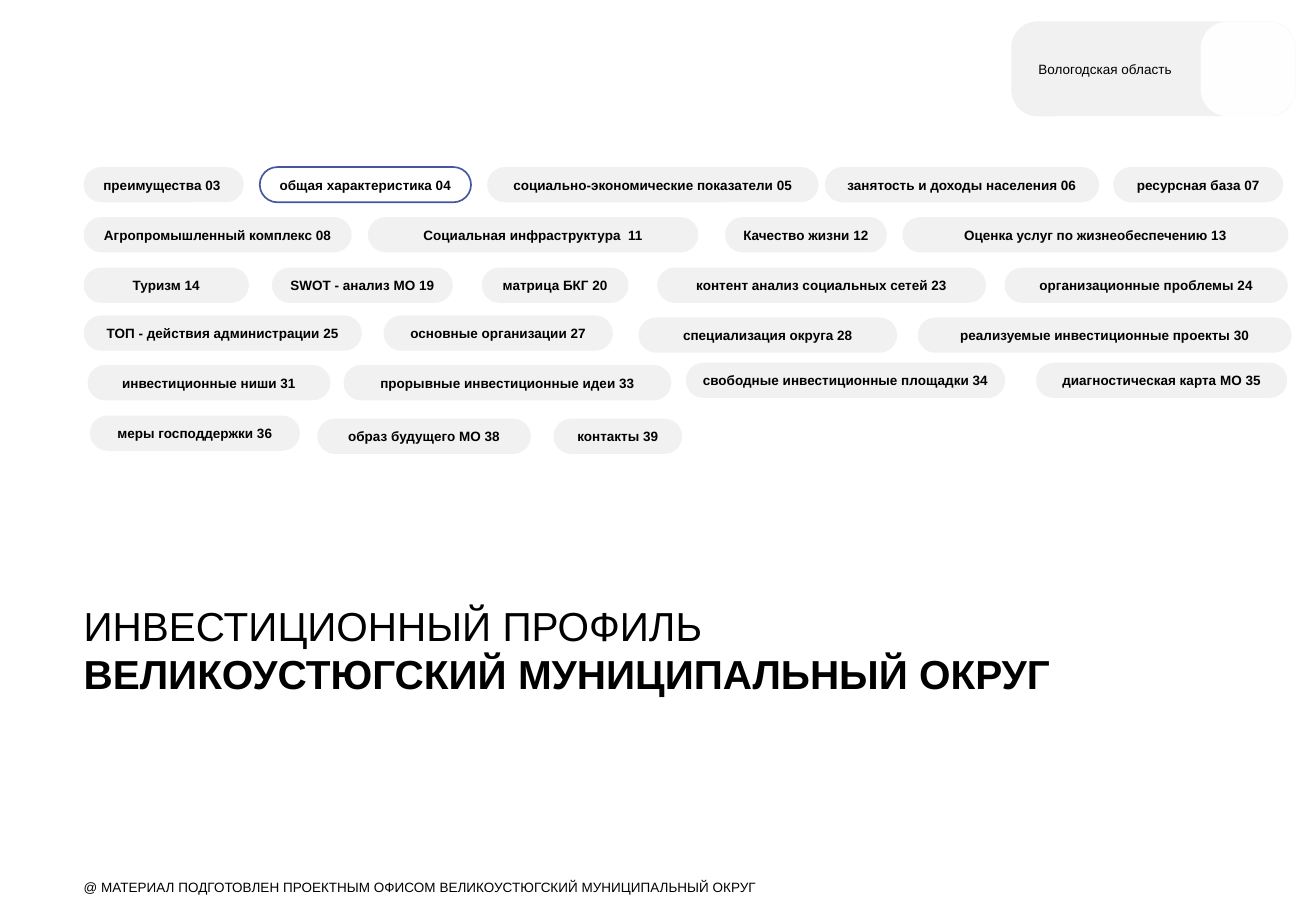
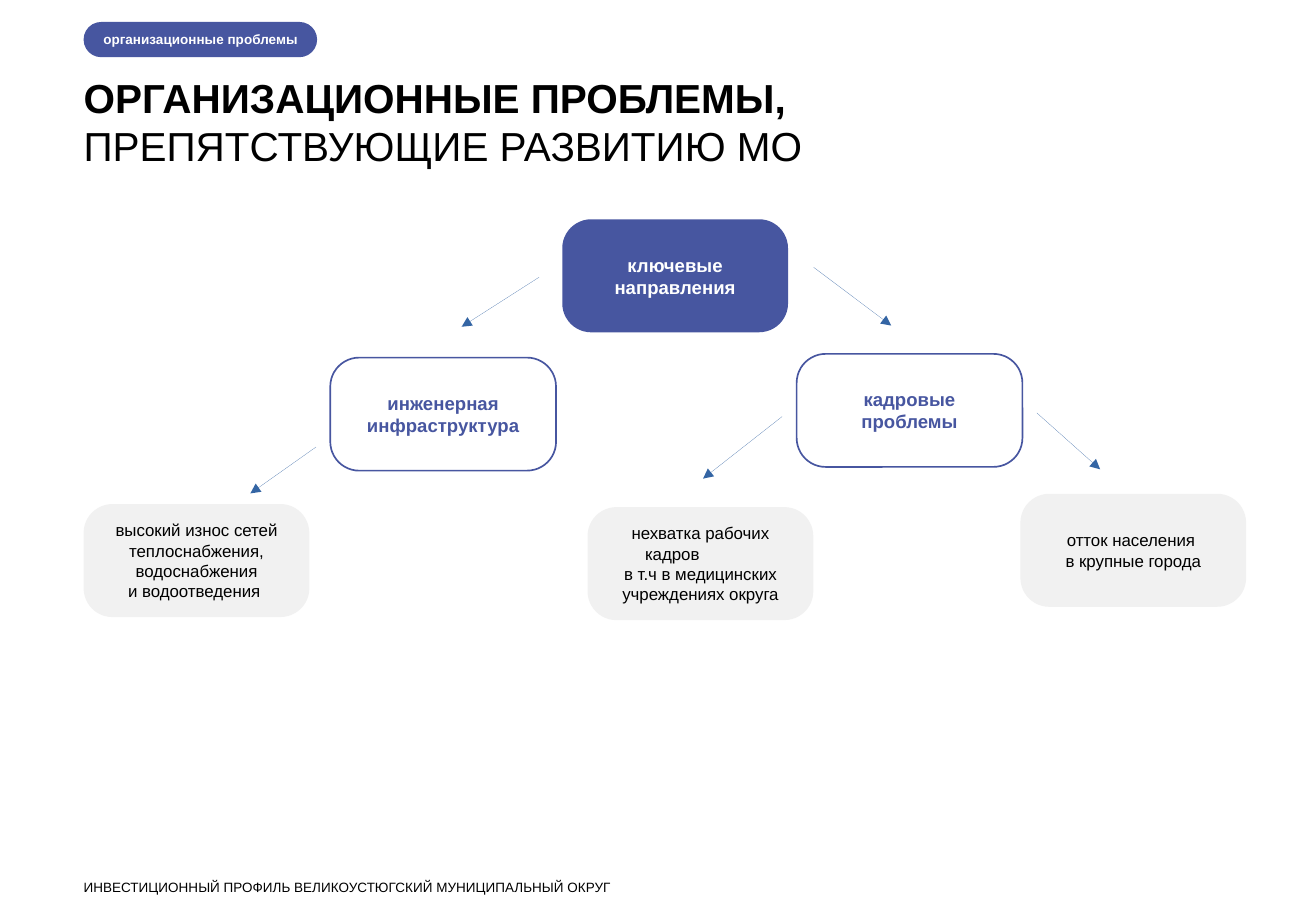
from lxml import etree
from pptx import Presentation
from pptx.dml.color import RGBColor
from pptx.enum import shapes, text
from pptx.oxml.ns import qn
from pptx.util import Pt

BLUE, GREY, WHITE, BLACK = "4756A0", "F1F1F1", "FFFFFF", "000000"
ARROW, TILE = "3465A4", "FEFEFE"
FONT = "Arial"
MARGIN = 49.6
PILL_HEIGHT = 20.9
CARD_WIDTH, CARD_HEIGHT = 133.9, 67
HAIRLINE = 0.01
CENTER, LEFT = text.PP_ALIGN.CENTER, text.PP_ALIGN.LEFT

FILLED = {"fill": BLUE, "color": WHITE}
OUTLINED = {"line": BLUE}
PLAIN = {"fill": GREY}

# Each row: top, then (label, left, width)
MENU_ROWS = [
    (99, [("социально-экономические показатели 05", 289, 196.5),
          ("занятость и доходы населения 06", 489.2, 162.7),
          ("ресурсная база 07", 660.3, 100.8)]),
    (128.7, [("Агропромышленный комплекс 08", MARGIN, 159),
             ("Социальная инфраструктура  11", 218.2, 196),
             ("Качество жизни 12", 430, 96),
             ("Оценка услуг по жизнеобеспечению 13", 535.2, 229)]),
    (158.6, [("Туризм 14", MARGIN, 98),
             ("SWOT - анализ МО 19", 161.3, 107.3),
             ("матрица БКГ 20", 285.8, 87),
             ("контент анализ социальных сетей 23", 389.8, 195),
             ("организационные проблемы 24", 595.8, 168)]),
    (187, [("ТОП - действия администрации 25", MARGIN, 165),
           ("основные организации 27", 227.5, 136)]),
    (188.2, [("специализация округа 28", 378.7, 153.4),
             ("реализуемые инвестиционные проекты 30", 544.3, 221.8)]),
    (216.4, [("инвестиционные ниши 31", 52, 144),
             ("прорывные инвестиционные идеи 33", 203.8, 194.4)]),
    (215, [("свободные инвестиционные площадки 34", 406.8, 189.4),
           ("диагностическая карта МО 35", 614.5, 149)]),
    (246.3, [("меры господдержки 36", 53.3, 124.6)]),
    (248.2, [("образ будущего МО 38", 188.2, 126.7),
             ("контакты 39", 328.3, 76.3)]),
]

# Paragraphs, each a list of (words, bold)
COVER_TITLE = [[("ИНВЕСТИЦИОННЫЙ ПРОФИЛЬ ", False),
                ("ВЕЛИКОУСТЮГСКИЙ МУНИЦИПАЛЬНЫЙ ОКРУГ", True)]]
PROBLEMS_TITLE = [[("ОРГАНИЗАЦИОННЫЕ ПРОБЛЕМЫ,", True)],
                  [("ПРЕПЯТСТВУЮЩИЕ РАЗВИТИЮ МО", False)]]
COVER_FOOTER = ("@ МАТЕРИАЛ ПОДГОТОВЛЕН ПРОЕКТНЫМ ОФИСОМ "
                "ВЕЛИКОУСТЮГСКИЙ МУНИЦИПАЛЬНЫЙ ОКРУГ")
PROBLEMS_FOOTER = "ИНВЕСТИЦИОННЫЙ ПРОФИЛЬ ВЕЛИКОУСТЮГСКИЙ МУНИЦИПАЛЬНЫЙ ОКРУГ"

# left, top, paragraphs, look
HEAD_CARDS = [
    (333.5, 130, ["ключевые направления"], FILLED),
    (195.9, 212, ["инженерная инфраструктура"], {**OUTLINED, "color": BLUE}),
    (472.5, 209.8, ["кадровые проблемы"], {**OUTLINED, "color": BLUE}),
]
DETAIL_CARDS = [
    (MARGIN, 298.8, ["высокий износ сетей теплоснабжения, водоснабжения",
                     "и водоотведения "]),
    (348.5, 300.6, ["нехватка рабочих кадров",
                    "в т.ч в медицинских учреждениях округа"]),
    (605.2, 292.7, ["отток населения ", "в крупные города"]),
]
# start x, start y, end x, end y
ARROWS = [
    (187.4, 265, 148.5, 292.5),
    (319.8, 164.3, 273.8, 193.7),
    (482.5, 158.4, 528.6, 193),
    (615, 244.8, 652.5, 278.2),
    (463.8, 247, 417, 283.7),
]


def rgb(value):
    return RGBColor.from_string(value)


def assign(target, values):
    for name, value in values.items():
        setattr(target, name, value)


def write(shape, paragraphs, size, color=BLACK, align=LEFT,
          insets=(0, 0, 0, 0), anchor=text.MSO_ANCHOR.MIDDLE):
    """Fill a shape with paragraphs, each a list of (words, bold) runs."""
    frame = shape.text_frame
    sides = ("margin_left", "margin_top", "margin_right", "margin_bottom")
    assign(frame, {"word_wrap": True, "vertical_anchor": anchor,
                   **dict(zip(sides, map(Pt, insets)))})
    for index, runs in enumerate(paragraphs):
        para = frame.paragraphs[0] if index == 0 else frame.add_paragraph()
        para.alignment = align
        for words, bold in runs:
            span = para.add_run()
            span.text = words
            assign(span.font, {"name": FONT, "size": Pt(size), "bold": bold})
            span.font.color.rgb = rgb(color)


def add_text(page, top, width, height, paragraphs, size):
    box = page.shapes.add_textbox(*map(Pt, (MARGIN, top, width, height)))
    write(box, paragraphs, size, anchor=text.MSO_ANCHOR.TOP)


def add_title(page, top, width, paragraphs):
    add_text(page, top, width, 57, paragraphs, 24)


def add_footer(page, words):
    add_text(page, 521, 577, 9, [[(words, False)]], 8)


def add_rounded(page, left, top, width, height, corner, fill=None, line=None):
    shape = page.shapes.add_shape(shapes.MSO_SHAPE.ROUNDED_RECTANGLE,
                                  *map(Pt, (left, top, width, height)))
    shape.adjustments[0] = corner
    shape.shadow.inherit = False
    if fill:
        shape.fill.solid()
        shape.fill.fore_color.rgb = rgb(fill)
    else:
        shape.fill.background()
    if line:
        shape.line.color.rgb = rgb(line)
        shape.line.width = Pt(1)
    else:
        shape.line.fill.background()
    return shape


def add_pill(page, label, left, top, width, align=CENTER, color=BLACK, **look):
    pill = add_rounded(page, left, top, width, PILL_HEIGHT, 0.5, **look)
    indent = 8.64 if align == LEFT else 0
    write(pill, [[(label, True)]], 8, color, align, (indent, 0, 0, 0))


def add_card(page, left, top, lines, size, bold, color=BLACK, **look):
    card = add_rounded(page, left, top, CARD_WIDTH, CARD_HEIGHT, 0.256, **look)
    write(card, [[(line, bold)] for line in lines], size, color, CENTER,
          (7.2, 3.6, 7.2, 3.6))
    return card


def hang_indent(para, margin, first):
    """Left-align a paragraph with its first line shifted from the rest."""
    para.alignment = LEFT
    props = para._p.get_or_add_pPr()
    props.set("marL", str(Pt(margin)))
    props.set("indent", str(Pt(first)))


def add_arrow(page, *ends):
    arrow = page.shapes.add_connector(shapes.MSO_CONNECTOR.STRAIGHT,
                                      *map(Pt, ends))
    arrow.line.color.rgb = rgb(ARROW)
    arrow.line.width = Pt(HAIRLINE)
    etree.SubElement(arrow.line._get_or_add_ln(), qn("a:tailEnd"),
                     type="triangle")
    etree.SubElement(arrow._element.spPr, qn("a:effectLst"))


def build_cover(page):
    add_pill(page, "преимущества 03", MARGIN, 99, 95, LEFT, **PLAIN)
    add_pill(page, "общая характеристика 04", 154.1, 99, 125.3, **OUTLINED)
    for top, pills in MENU_ROWS:
        for label, left, width in pills:
            add_pill(page, label, left, top, width, **PLAIN)
    add_footer(page, COVER_FOOTER)
    add_title(page, 356, 575.3, COVER_TITLE)
    region = add_rounded(page, 599.8, 12.7, 168.5, 56.2, 0.275, **PLAIN)
    write(region, [[("Вологодская область", False)]], 8,
          insets=(11.5, 3.6, 56.9, 3.6))
    add_rounded(page, 712.1, 12.7, 56.2, 56.2, 0.286, fill=TILE)


def build_problems(page):
    add_title(page, 43.2, 720.7, PROBLEMS_TITLE)
    add_pill(page, "организационные проблемы", MARGIN, 13, 138.5, LEFT, **FILLED)
    for left, top, lines, look in HEAD_CARDS:
        add_card(page, left, top, lines, 11, True, **look)
    details = [add_card(page, left, top, lines, 10, False, **PLAIN)
               for left, top, lines in DETAIL_CARDS]
    hang_indent(details[1].text_frame.paragraphs[0], 22, -8)
    add_footer(page, PROBLEMS_FOOTER)
    for ends in ARROWS:
        add_arrow(page, *ends)


def main():
    deck = Presentation()
    deck.slide_width = Pt(780.48)
    deck.slide_height = Pt(540)
    for build in (build_cover, build_problems):
        build(deck.slides.add_slide(deck.slide_layouts[6]))
    deck.save("out.pptx")


if __name__ == "__main__":
    main()
